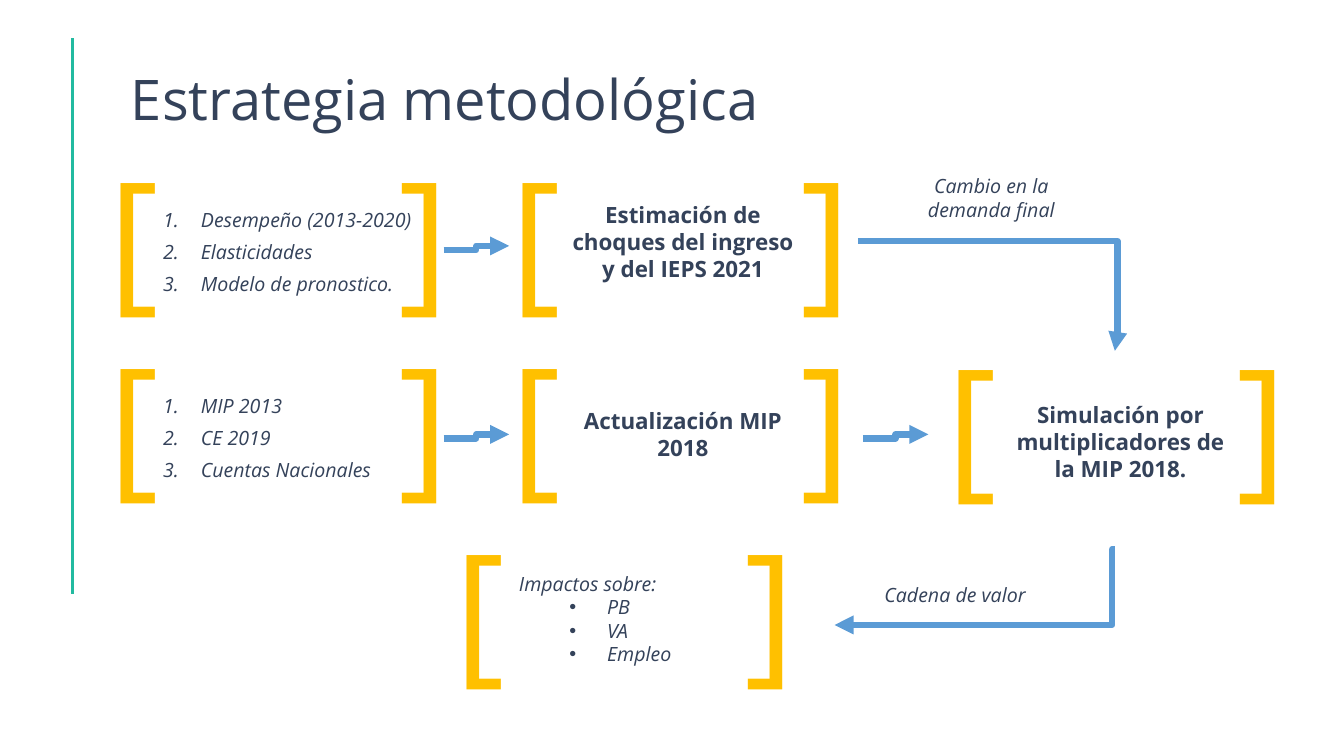
from lxml import etree
from pptx import Presentation
from pptx.dml.color import RGBColor
from pptx.enum.shapes import MSO_CONNECTOR, MSO_SHAPE
from pptx.enum.text import MSO_ANCHOR, MSO_AUTO_SIZE, PP_ALIGN
from pptx.oxml.ns import qn
from pptx.util import Inches, Pt

COLORS = {
    "ink": "34425A",
    "bracket": "FFC000",
    "arrow": "5B9BD5",
    "rule": "22BAA0",
    "paper": "FFFFFF",
}
FONT = "Open Sans"
CELL = 0.1  # inches per grid column and row
COLS, ROWS = 133.33, 75
BRACKET_SPAN, BRACKET_TAB = 33.9, 28.8  # full pair, start of the closing one


def grid(n):
    return Inches(n * CELL)


def rgb(name):
    return RGBColor.from_string(COLORS[name])


class Diagram:
    def __init__(self, slide):
        self.s = slide

    def frame(self, sp, anchor=MSO_ANCHOR.TOP):
        tf = sp.text_frame
        tf.word_wrap = True
        tf.auto_size = MSO_AUTO_SIZE.SHAPE_TO_FIT_TEXT
        tf.vertical_anchor = anchor
        return tf

    def box(self, x, y, w, h, anchor=MSO_ANCHOR.TOP):
        sp = self.s.shapes.add_textbox(grid(x), grid(y), grid(w), grid(h))
        return self.frame(sp, anchor)

    def para(self, tf, text, size, color="ink", align=PP_ALIGN.LEFT,
             bold=False, italic=False):
        p = tf.paragraphs[0]
        if p.runs:
            p = tf.add_paragraph()
        p.alignment = align
        r = p.add_run()
        r.text = text
        f = r.font
        f.name, f.size, f.bold, f.italic = FONT, Pt(size), bold, italic
        f.color.rgb = rgb(color)
        return p

    def bullet(self, p, margin, tag, **attrs):
        pPr = p._p.get_or_add_pPr()
        pPr.set("marL", str(grid(margin)))
        pPr.set("indent", str(-grid(3.75)))
        if tag == "a:buChar":
            etree.SubElement(pPr, qn("a:buFont"), typeface="Arial")
        etree.SubElement(pPr, qn(tag), **attrs)

    def title(self, text):
        tf = self.box(12, 5.9, 74.2, 7.7, MSO_ANCHOR.MIDDLE)
        self.para(tf, text, 40)

    def brackets(self, x, y, w=38.9):
        tf = self.box(x, y, w, 18.2, MSO_ANCHOR.MIDDLE)
        tf.margin_left, tf.margin_right = grid((w - BRACKET_SPAN) / 2), 0
        p = self.para(tf, "[\t]", 110, "bracket")
        tabs = etree.SubElement(p._p.get_or_add_pPr(), qn("a:tabLst"))
        etree.SubElement(tabs, qn("a:tab"), pos=str(grid(BRACKET_TAB)), algn="l")

    def step(self, x, y, h, text):
        self.para(self.box(x, y, 24.5, h), text, 16,
                  align=PP_ALIGN.CENTER, bold=True)

    def numbered(self, x, y, items):
        tf = self.box(x, y, 32.9, 9.1)
        for item in items:
            p = self.para(tf, item, 14, italic=True)
            p.space_before = Pt(6)
            self.bullet(p, 3.75, "a:buAutoNum", type="arabicPeriod")

    def impacts(self, x, y, heading, items):
        tf = self.box(x, y, 24.4, 9.7)
        self.para(tf, heading, 14, italic=True)
        for item in items:
            p = self.para(tf, item, 14, italic=True)
            p.level = 1
            self.bullet(p, 8.75, "a:buChar", char="•")

    def label(self, x, y, h, text):
        sp = self.s.shapes.add_shape(MSO_SHAPE.RECTANGLE, grid(x), grid(y),
                                     grid(20.1), grid(h))
        sp.shadow.inherit = False
        sp.fill.solid()
        sp.fill.fore_color.rgb = rgb("paper")
        sp.line.fill.background()
        self.para(self.frame(sp), text, 14, align=PP_ALIGN.CENTER, italic=True)

    def line(self, kind, start, end, color, width):
        sp = self.s.shapes.add_connector(kind, *map(grid, start + end))
        sp.line.color.rgb = rgb(color)
        sp.line.width = Pt(width)
        etree.SubElement(sp._element.spPr, qn("a:effectLst"))
        return sp

    def arrow(self, start, end, bend=0.5):
        sp = self.line(MSO_CONNECTOR.ELBOW, start, end, "arrow", 4.5)
        etree.SubElement(sp.line._get_or_add_ln(), qn("a:tailEnd"), type="triangle")
        av = sp._element.spPr.find(qn("a:prstGeom")).find(qn("a:avLst"))
        etree.SubElement(av, qn("a:gd"), name="adj1",
                         fmla=f"val {round(bend * 100000)}")


def main():
    prs = Presentation()
    prs.slide_width, prs.slide_height = grid(COLS), grid(ROWS)
    d = Diagram(prs.slides.add_slide(prs.slide_layouts[6]))

    # Heading
    d.line(MSO_CONNECTOR.STRAIGHT, (7.2, 58.9), (7.2, 3.8), "rule", 1.5)
    d.title("Estrategia metodológica")

    # Inputs, and the step each one feeds
    rows = [
        (13.9, ["Desempeño (2013-2020)", "Elasticidades", "Modelo de pronostico."],
         "Estimación de choques del ingreso y del IEPS 2021", 5.6, 9.1),
        (32.4, ["MIP 2013", "CE 2019", "Cuentas Nacionales"],
         "Actualización MIP 2018", 7.5, 6),
    ]
    for top, inputs, step, drop, height in rows:
        d.brackets(9.4, top, 36.6)
        d.brackets(48.1, top)
        d.numbered(15.2, top + 6.2, inputs)
        d.step(55.5, top + drop, height, step)

    # Simulation
    d.brackets(91.4, 32.5)
    d.step(98.9, 39.3, 9.1, "Simulación por multiplicadores de la MIP 2018.")

    # Impacts
    d.brackets(42.6, 50.8)
    d.impacts(50.5, 56.2, "Impactos sobre:", ["PB", "VA", "Empleo"])

    # Captions of the long arrows
    d.label(88.3, 16.8, 5.3, "Cambio en la demanda final")
    d.label(84.7, 57.3, 3.1, "Cadena de valor")

    # Arrows
    for x, y in [(44, 24.8), (44, 43.5), (85.6, 43.5)]:
        d.arrow((x, y), (x + 6.5, y - 0.4))
    d.arrow((85.1, 23.9), (110.6, 34.8), 1.01)
    d.arrow((110.6, 54.5), (82.8, 62), 0.01)

    prs.save("out.pptx")


if __name__ == "__main__":
    main()
